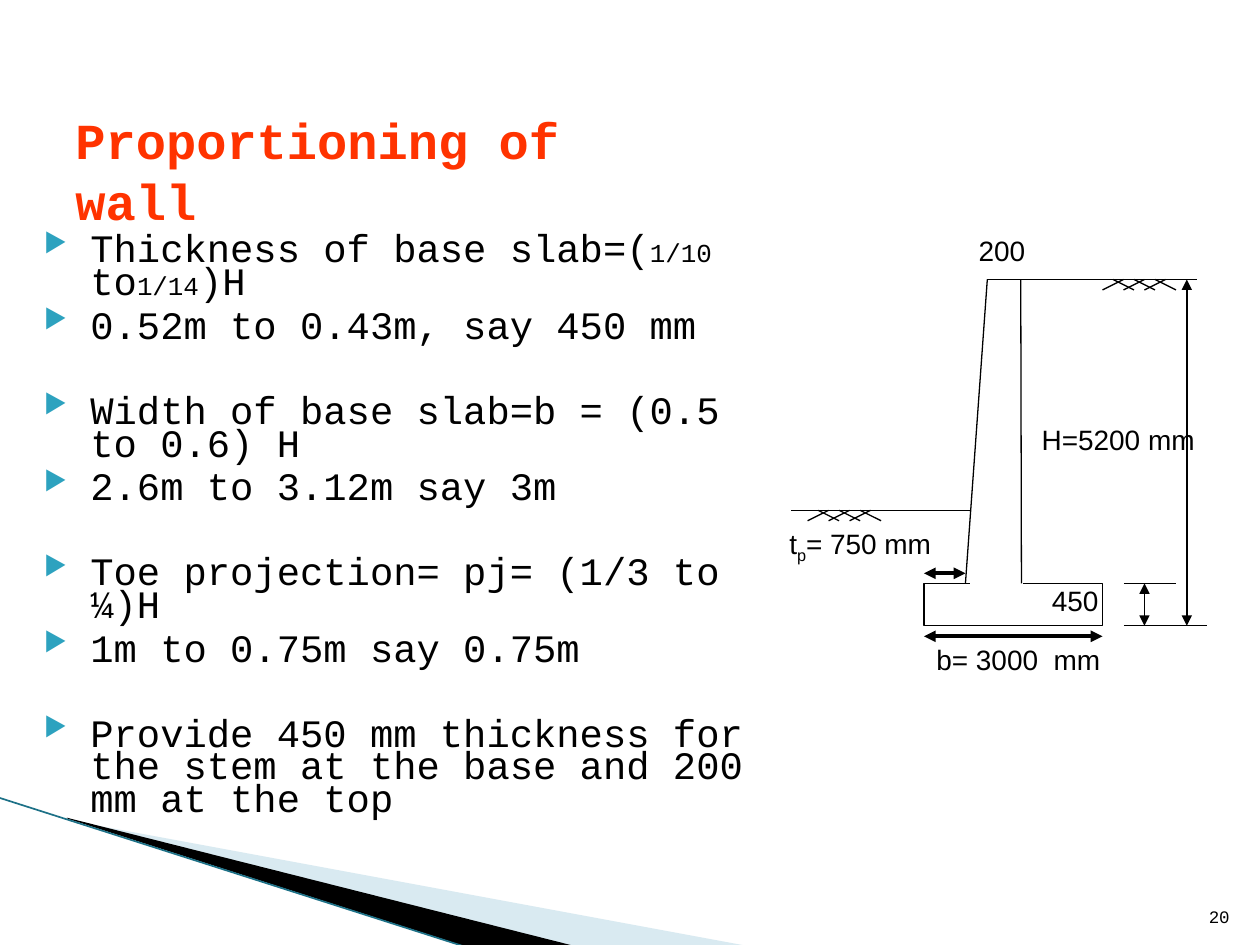
from lxml import etree
from pptx import Presentation
from pptx.dml.color import RGBColor
from pptx.enum.shapes import MSO_CONNECTOR as Connector, MSO_SHAPE as Shape
from pptx.enum.text import MSO_ANCHOR as Anchor, PP_ALIGN as Align
from pptx.oxml import parse_xml
from pptx.oxml.ns import nsdecls, qn
from pptx.util import Pt

BLACK = RGBColor(0x00, 0x00, 0x00)
WHITE = RGBColor(0xFF, 0xFF, 0xFF)
TITLE_RED = RGBColor(0xFF, 0x33, 0x00)
BULLET_TEAL = RGBColor(0x2D, 0xA2, 0xBF)
BAND_BLUE = RGBColor(0xA0, 0xCB, 0xDC)
EDGE_TEAL = RGBColor(0x1D, 0x71, 0x87)
MONO, SANS = "Courier New", "Arial"
BODY_SIZE, FRACTION_SIZE = 22.2, 14.8

# Each group is separated by a gap; each bullet is a list of (text, size) spans
BULLET_GROUPS = [
    [[("Thickness of base slab=(", BODY_SIZE), ("1/10", FRACTION_SIZE), (" to", BODY_SIZE),
      ("1/14", FRACTION_SIZE), (")H", BODY_SIZE)],
     [("0.52m to 0.43m, say 450 mm", BODY_SIZE)]],
    [[("Width of base slab=b = (0.5 to 0.6) H", BODY_SIZE)],
     [("2.6m to 3.12m say 3m", BODY_SIZE)]],
    [[("Toe projection= pj= (1/3 to ¼)H", BODY_SIZE)],
     [("1m to 0.75m say 0.75m", BODY_SIZE)]],
    [[("Provide 450 mm thickness for the stem at the base and 200 mm at the top", BODY_SIZE)]],
]


def add_span(para, text, size=16, font=SANS, color=BLACK, bold=False, baseline=0):
    span = para.add_run()
    span.text = text
    span.font.size, span.font.name, span.font.bold = Pt(size), font, bold
    span.font.color.rgb = color
    if baseline:
        span.font._element.set("baseline", str(baseline * 1000))
    return span


def add_frame(page, box, anchor=Anchor.TOP):
    frame = page.shapes.add_textbox(*map(Pt, box)).text_frame
    frame.word_wrap = True
    frame.vertical_anchor = anchor
    return frame


def add_line(page, start, end, width=0.75, color=BLACK, arrows=False):
    line = page.shapes.add_connector(Connector.STRAIGHT, *map(Pt, (*start, *end)))
    line.line.width = Pt(width)
    line.line.color.rgb = color
    if arrows:
        for tag in ("a:headEnd", "a:tailEnd"):
            etree.SubElement(line.line._get_or_add_ln(), qn(tag), type="triangle")
    etree.SubElement(line._element.spPr, qn("a:effectLst"))
    return line


def add_block(page, box, outlined=False):
    block = page.shapes.add_shape(Shape.RECTANGLE, *map(Pt, box))
    block.shadow.inherit = False
    block.fill.solid()
    block.fill.fore_color.rgb = WHITE
    if outlined:
        block.line.color.rgb = BLACK
        block.line.width = Pt(0.75)
    else:
        block.line.fill.background()


def add_band(page, points, color, opacity=100):
    corners = [(Pt(x), Pt(y)) for x, y in points]
    builder = page.shapes.build_freeform(*corners[0], scale=1.0)
    builder.add_line_segments(corners[1:], close=True)
    band = builder.convert_to_shape()
    band.shadow.inherit = False
    band.fill.solid()
    band.fill.fore_color.rgb = color
    band.line.fill.background()
    if opacity < 100:
        shade = band._element.spPr.find(".//" + qn("a:srgbClr"))
        etree.SubElement(shade, qn("a:alpha"), val=str(opacity * 1000))


def draw_corner(page, left, top):
    def at(*points):
        return [(left + x, top + y) for x, y in points]

    add_band(page, at((39.6, 13), (428.4, 85), (328.3, 85), (39.6, 12.2)), BAND_BLUE, 40)
    add_band(page, at((38.2, 11.5), (329, 85), (267.8, 85.6), (38.9, 12.2)), BLACK)
    add_line(page, *at((-0.7, 0), (267, 85.6)), width=0.95, color=EDGE_TEAL)


def write_title(page, box):
    para = add_frame(page, box, Anchor.MIDDLE).paragraphs[0]
    para.line_spacing = Pt(34.8)
    add_span(para, "Proportioning of wall", size=28.8, font=MONO, color=TITLE_RED, bold=True)


def add_bullet(para):
    props = para._p.get_or_add_pPr()
    props.set("marL", str(Pt(26.6)))
    props.set("indent", str(-Pt(26.6)))
    for xml in (f'<a:buClr {nsdecls("a")}><a:srgbClr val="{BULLET_TEAL}"/></a:buClr>',
                f'<a:buSzPct {nsdecls("a")} val="68000"/>',
                f'<a:buChar {nsdecls("a")} char="▶"/>'):
        props.append(parse_xml(xml))


def write_bullets(page, box):
    frame = add_frame(page, box)
    for group_index, group in enumerate(BULLET_GROUPS):
        for index, spans in enumerate(group):
            first = group_index == index == 0
            para = frame.paragraphs[0] if first else frame.add_paragraph()
            add_bullet(para)
            para.line_spacing = 0.7
            para.space_before = Pt(0 if first else 6.3 if index else 30)
            for text, size in spans:
                add_span(para, text, size=size, font=MONO)


def draw_wall(page, left, top):
    def at(x, y):
        return left + x, top + y

    def line(start, end, **style):
        add_line(page, at(*start), at(*end), **style)

    def label(x, y, width, *spans):
        para = add_frame(page, (*at(x, y), width, 26.6)).paragraphs[0]
        for text, baseline in spans:
            add_span(para, text, baseline=baseline)

    def hatch(x, y, pitch=12, depth=6):
        for step in range(3):
            near = x + step * pitch
            line((near + pitch, y), (near, y + depth))
            line((near + pitch / 2, y), (near + pitch * 1.5, y + depth))

    ground, soil, base_top, base_bottom = 29.7, 161.6, 203.4, 227.6
    base_left, base_right, stem_top, stem_foot, stem_back = 84, 186, 120.2, 107.7, 139.3
    height_x, thickness_x, extension, crest = 234.2, 210, 198.2, 126.2

    # Base slab, ground levels and soil hatching
    add_block(page, (*at(base_left, base_top), base_right - base_left, base_bottom - base_top),
              outlined=True)
    line((crest, ground), (240, ground))
    line((crest, ground), (stem_top, ground))
    line((110.4, soil), (8.2, soil))
    hatch(17.5, soil)
    hatch(base_right, ground)

    # Dimension arrows and extension lines
    line((extension, base_top), (227.8, base_top))
    line((extension, base_bottom), (245.8, base_bottom))
    line((height_x, ground), (height_x, base_bottom), width=1.5, arrows=True)
    line((thickness_x, base_top), (thickness_x, base_bottom), arrows=True)
    line((base_left, 197.6), (stem_foot, 197.6), width=2.25, arrows=True)
    line((base_left, 233.6), (base_right, 233.6), width=2.25, arrows=True)

    # Dimension labels
    label(108.2, 0, 72, ("200", 0))
    label(144.2, 107.9, 126, ("H=5200 mm", 0))
    label(0, 167.4, 114, ("t", 0), ("p", -25), ("= 750 mm", 0))
    label(base_left, 233.6, 132, ("b= 3000  mm", 0))
    label(150, 199.8, 66, ("450", 0))

    # Stem, opened onto the slab
    add_block(page, (*at(110.4, 199), 30.2, 5.8))
    line((stem_top, ground), (stem_foot, base_top))
    line((stem_back, ground), (stem_back + 0.4, base_top))


def write_page_number(page, box):
    para = add_frame(page, box, Anchor.BOTTOM).paragraphs[0]
    para.alignment = Align.RIGHT
    add_span(para, "20", size=10, font=MONO)


def main():
    deck = Presentation()
    deck.slide_width, deck.slide_height = Pt(720), Pt(540)
    page = deck.slides.add_slide(deck.slide_layouts[6])
    draw_corner(page, 0, 455.8)
    write_page_number(page, (681, 504.7, 28.8, 28.8))
    write_title(page, (36, 36, 318.2, 122.4))
    write_bullets(page, (18, 131.8, 432, 354.2))
    draw_wall(page, 444, 130)
    deck.save("out.pptx")


if __name__ == "__main__":
    main()
